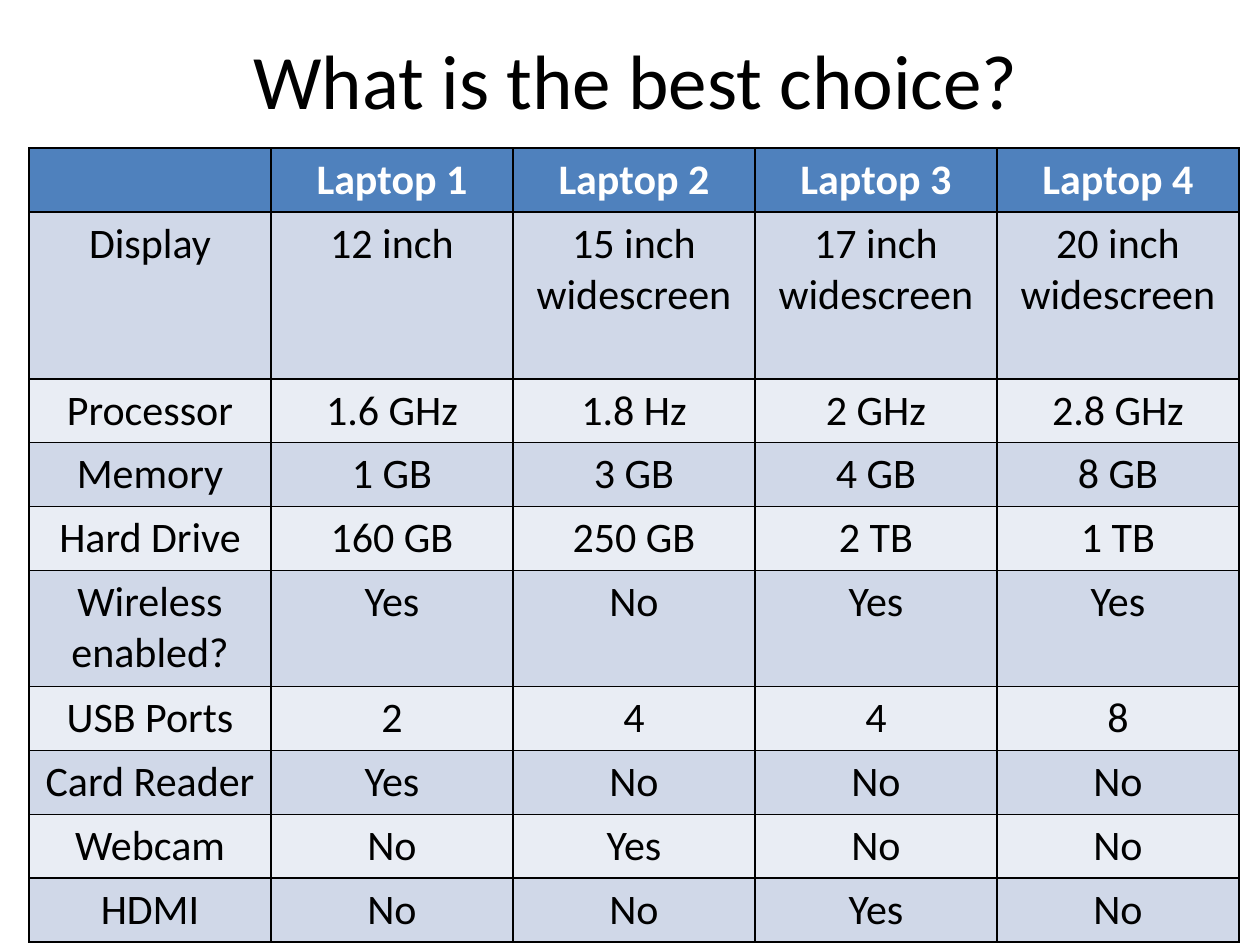
from lxml import etree
from pptx import Presentation
from pptx.dml.color import RGBColor as RGB
from pptx.enum.text import MSO_ANCHOR as ANCHOR, PP_ALIGN as ALIGN
from pptx.oxml.ns import qn
from pptx.util import Emu, Pt

COLORS = {"text": "000000", "header_text": "FFFFFF", "header": "4F81BD",
          "band_dark": "D0D8E8", "band_light": "E9EDF4", "border": "000000"}
FONT = "Calibri"
COL_W = 242
ROW_H = [63, 167, 63, 63, 63, 116, 63, 63, 63, 63]
ROWS = [
    ["", "Laptop 1", "Laptop 2", "Laptop 3", "Laptop 4"],
    ["Display", "12 inch", "15 inch widescreen", "17 inch widescreen", "20 inch widescreen"],
    ["Processor", "1.6 GHz", "1.8 Hz", "2 GHz", "2.8 GHz"],
    ["Memory", "1 GB", "3 GB", "4 GB", "8 GB"],
    ["Hard Drive", "160 GB", "250 GB", "2 TB", "1 TB"],
    ["Wireless enabled?", "Yes", "No", "Yes", "Yes"],
    ["USB Ports", "2", "4", "4", "8"],
    ["Card Reader", "Yes", "No", "No", "No"],
    ["Webcam", "No", "Yes", "No", "No"],
    ["HDMI", "No", "No", "Yes", "No"],
]


def px(n):
    return Emu(round(n * 914400 / 126))


def format_text(tf, size, color, bold=False):
    p = tf.paragraphs[0]
    p.alignment = ALIGN.CENTER
    for r in p.runs:
        r.font.name = FONT
        r.font.size = Pt(size)
        r.font.bold = bold
        r.font.color.rgb = RGB.from_string(COLORS[color])


prs = Presentation()
prs.slide_width, prs.slide_height = px(1260), px(945)
s = prs.slides.add_slide(prs.slide_layouts[5])

title = s.shapes.title
title.left, title.top, title.width, title.height = px(69), px(0), px(1134), px(158)
title.text_frame.text = "What is the best choice?"
title.text_frame.vertical_anchor = ANCHOR.MIDDLE
format_text(title.text_frame, 44, "text")

table = s.shapes.add_table(len(ROWS), len(ROWS[0]), px(29), px(148),
                           px(COL_W * len(ROWS[0])), px(sum(ROW_H))).table
for col in table.columns:
    col.width = px(COL_W)

for i, (values, height) in enumerate(zip(ROWS, ROW_H)):
    table.rows[i].height = px(height)
    fill = "header" if i == 0 else "band_dark" if i % 2 else "band_light"
    for j, value in enumerate(values):
        cell = table.cell(i, j)
        cell.text_frame.text = value
        format_text(cell.text_frame, 24, "text" if i else "header_text", i == 0)
        tc_pr = cell._tc.get_or_add_tcPr()
        for side in ("a:lnL", "a:lnR", "a:lnT", "a:lnB"):
            ln = etree.SubElement(tc_pr, qn(side), w=str(Pt(1)))
            solid = etree.SubElement(ln, qn("a:solidFill"))
            etree.SubElement(solid, qn("a:srgbClr"), val=COLORS["border"])
        cell.fill.solid()
        cell.fill.fore_color.rgb = RGB.from_string(COLORS[fill])

prs.save("out.pptx")
